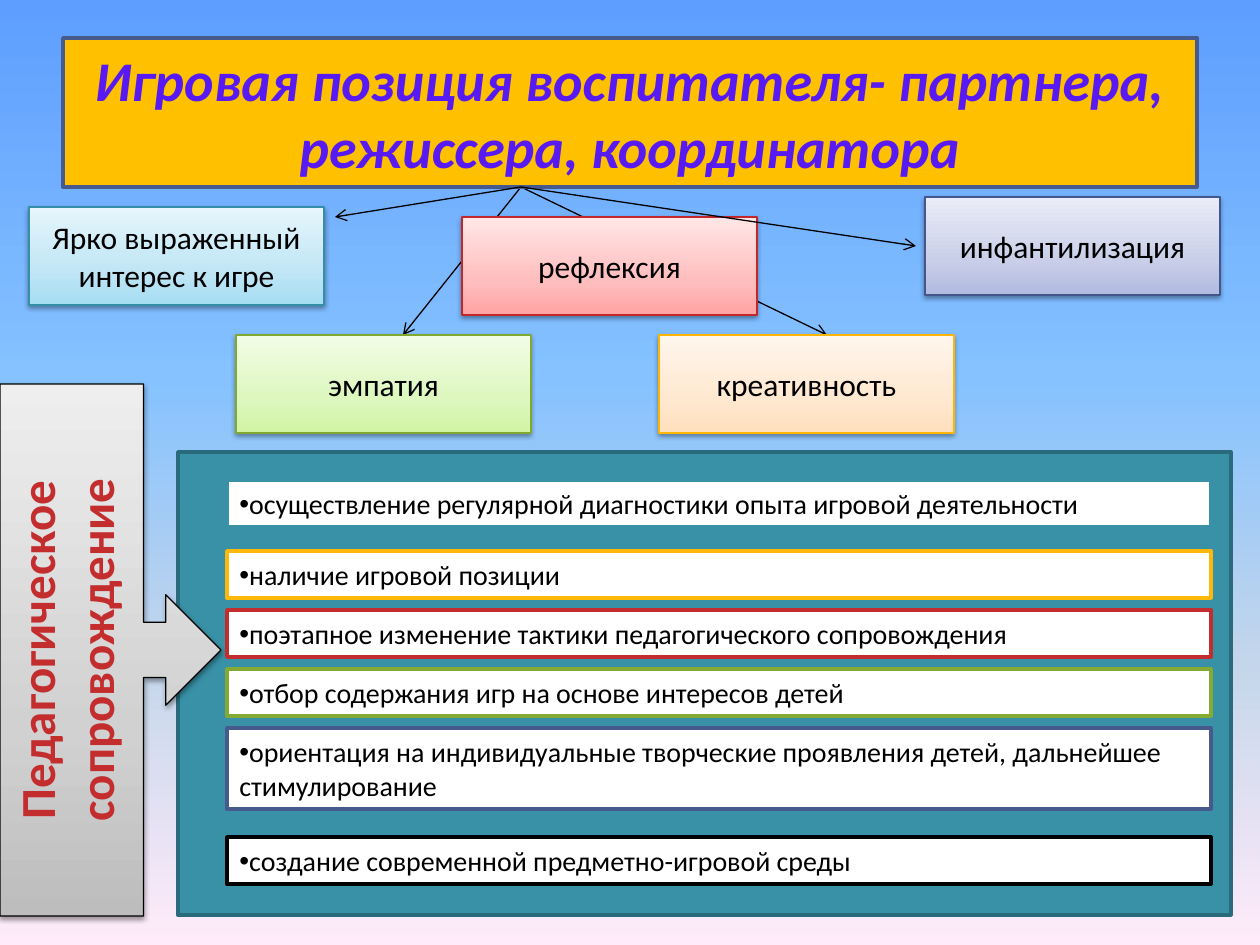
import pptx
import pptx.dml.color
import pptx.enum.shapes
import pptx.enum.text
import pptx.oxml
import pptx.oxml.ns
import pptx.util
from lxml import etree

PX = 7257.6  # EMU per px, 126 px to the inch
BOX_SIZE = (295, 98)
ROW_LEFT, ROW_WIDTH = 227, 984
HUB = (521, 187)  # where all arrows start

COLORS = {
    "black": "000000", "white": "FFFFFF", "amber": "FFC000", "violet": "581AF2",
    "navy": "475A8D", "teal": "3891A7", "dark teal": "296B7C", "yellow": "FEB80A",
    "red": "C32D2E", "green": "84AA33", "box teal": "348FA6", "box green": "82A92F",
    "box yellow": "FEB604", "box navy": "44578C", "box red": "C22829",
}
BACKGROUND = [(0, "5E9EFF"), (40, "85C2FF"), (70, "C4D6EB"), (100, "FFEBFA")]

# Text, left, top, line colour, gradient from bottom to top
QUALITIES = [
    ("Ярко выраженный интерес к игре", 29, 207, "box teal", ("A5DDF3", "C1E6F5", "E6F6FC")),
    ("эмпатия", 236, 335, "box green", ("D0F5A3", "DDF7BF", "F2FDE6")),
    ("креативность", 659, 335, "box yellow", ("FFDFBC", "FFE8D0", "FFF6ED")),
    ("инфантилизация", 925, 197, "box navy", ("B2BBE0", "C9CFE8", "EAECF7")),
    ("рефлексия", 462, 217, "box red", ("FFA3A3", "FFBEBE", "FFE6E6")),
]
# Text, top, height, line colour
SUPPORT_ROWS = [
    ("осуществление регулярной диагностики опыта игровой деятельности", 480, 47, "teal"),
    ("наличие игровой позиции", 551, 47, "yellow"),
    ("поэтапное изменение тактики педагогического сопровождения", 610, 47, "red"),
    ("отбор содержания игр на основе интересов детей", 669, 47, "green"),
    ("ориентация на индивидуальные творческие проявления детей, дальнейшее стимулирование",
     728, 81, "navy"),
    ("создание современной предметно-игровой среды", 837, 47, "black"),
]

SHAPE = pptx.enum.shapes.MSO_SHAPE
ALIGN = pptx.enum.text.PP_ALIGN
ANCHOR = pptx.enum.text.MSO_ANCHOR
qn = pptx.oxml.ns.qn


def px(value):
    return pptx.util.Emu(round(value * PX))


def rgb(name):
    return pptx.dml.color.RGBColor.from_string(COLORS[name])


def set_gradient(fill, element, stops, angle):
    fill.gradient()
    gradient = element.find(".//" + qn("a:gradFill"))
    stop_list = gradient.find(qn("a:gsLst"))
    for stop in list(stop_list):
        stop_list.remove(stop)
    for position, color in stops:
        stop = etree.SubElement(stop_list, qn("a:gs"), pos=str(position * 1000))
        etree.SubElement(stop, qn("a:srgbClr"), val=color)
    gradient.find(qn("a:lin")).set("ang", str(angle * 60000))


def add_shadow(shape):
    effects = shape._element.spPr.find(qn("a:effectLst"))
    shadow = etree.SubElement(effects, qn("a:outerShdw"), blurRad="39370", dist="20320",
                              dir="5400000", rotWithShape="0")
    color = etree.SubElement(shadow, qn("a:srgbClr"), val=COLORS["black"])
    etree.SubElement(color, qn("a:alpha"), val="38000")


def add_block(slide, left, top, width, height, line, fill=None, shades=None,
              line_width=2, kind=SHAPE.RECTANGLE):
    """Add a shape with a plain fill, or with three shades and a shadow."""
    shape = slide.shapes.add_shape(kind, px(left), px(top), px(width), px(height))
    shape.shadow.inherit = False
    shape.line.color.rgb = rgb(line)
    shape.line.width = pptx.util.Pt(line_width)
    if shades:
        set_gradient(shape.fill, shape._element, zip((0, 35, 100), shades), 270)
        add_shadow(shape)
    else:
        shape.fill.solid()
        shape.fill.fore_color.rgb = rgb(fill)
    return shape


def set_text(shape, text, size=18, color="black", bold=False, italic=False,
             align=ALIGN.CENTER, anchor=ANCHOR.MIDDLE, bullet=False):
    frame = shape.text_frame
    frame.word_wrap = True
    frame.vertical_anchor = anchor
    paragraph = frame.paragraphs[0]
    paragraph.alignment = align
    run = paragraph.add_run()
    run.text = text
    font = run.font
    font.name, font.size = "Calibri", pptx.util.Pt(size)
    font.bold, font.italic = bold, italic
    font.color.rgb = rgb(color)
    if bullet:
        properties = paragraph._p.get_or_add_pPr()
        etree.SubElement(properties, qn("a:buFont"), typeface="Arial")
        etree.SubElement(properties, qn("a:buChar"), char="•")


def add_arrow(slide, end):
    arrow = slide.shapes.add_connector(pptx.enum.shapes.MSO_CONNECTOR.STRAIGHT,
                                       *map(px, HUB + end))
    arrow.line.color.rgb = rgb("black")
    arrow.line.width = pptx.util.Pt(0.75)
    etree.SubElement(arrow.line._get_or_add_ln(), qn("a:tailEnd"), type="arrow")
    etree.SubElement(arrow._element.spPr, qn("a:effectLst"))


def add_support_row(slide, text, top, height, line):
    row = add_block(slide, ROW_LEFT, top, ROW_WIDTH, height, line, fill="white")
    align = ALIGN.LEFT if height > 47 else ALIGN.JUSTIFY
    set_text(row, text, size=16, align=align, bullet=True)


def main():
    presentation = pptx.Presentation()
    presentation.slide_width, presentation.slide_height = px(1260), px(945)
    slide = presentation.slides.add_slide(presentation.slide_layouts[6])
    set_gradient(slide.background.fill, slide._element, BACKGROUND, 90)

    # Panel, and the arrows that pass behind the boxes
    add_block(slide, 178, 452, 1053, 463, "dark teal", fill="teal",
              kind=SHAPE.FLOWCHART_PROCESS)
    for end in ((403, 335), (827, 335)):
        add_arrow(slide, end)

    # Title
    title = add_block(slide, 63, 38, 1134, 149, "navy", fill="amber")
    set_text(title, "Игровая позиция воспитателя- партнера, режиссера, координатора",
             size=32, color="violet", bold=True, italic=True)

    # Qualities, and the arrows in front of them
    for text, left, top, line, shades in QUALITIES:
        box = add_block(slide, left, top, *BOX_SIZE, line, shades=shades, line_width=0.75)
        set_text(box, text)
    for end in ((335, 217), (916, 246)):
        add_arrow(slide, end)

    # Callout with upward text
    callout = add_block(slide, 0, 384, 221, 532, "black", line_width=0.75,
                        shades=("BDBDBD", "D1D1D1", "EEEEEE"),
                        kind=SHAPE.RIGHT_ARROW_CALLOUT)
    set_text(callout, "Педагогическое сопровождение", size=28, color="red", bold=True,
             anchor=ANCHOR.TOP)
    callout.text_frame._txBody.bodyPr.set("vert", "vert270")

    # Support measures
    for row in SUPPORT_ROWS:
        add_support_row(slide, *row)

    presentation.save("out.pptx")


if __name__ == "__main__":
    main()
